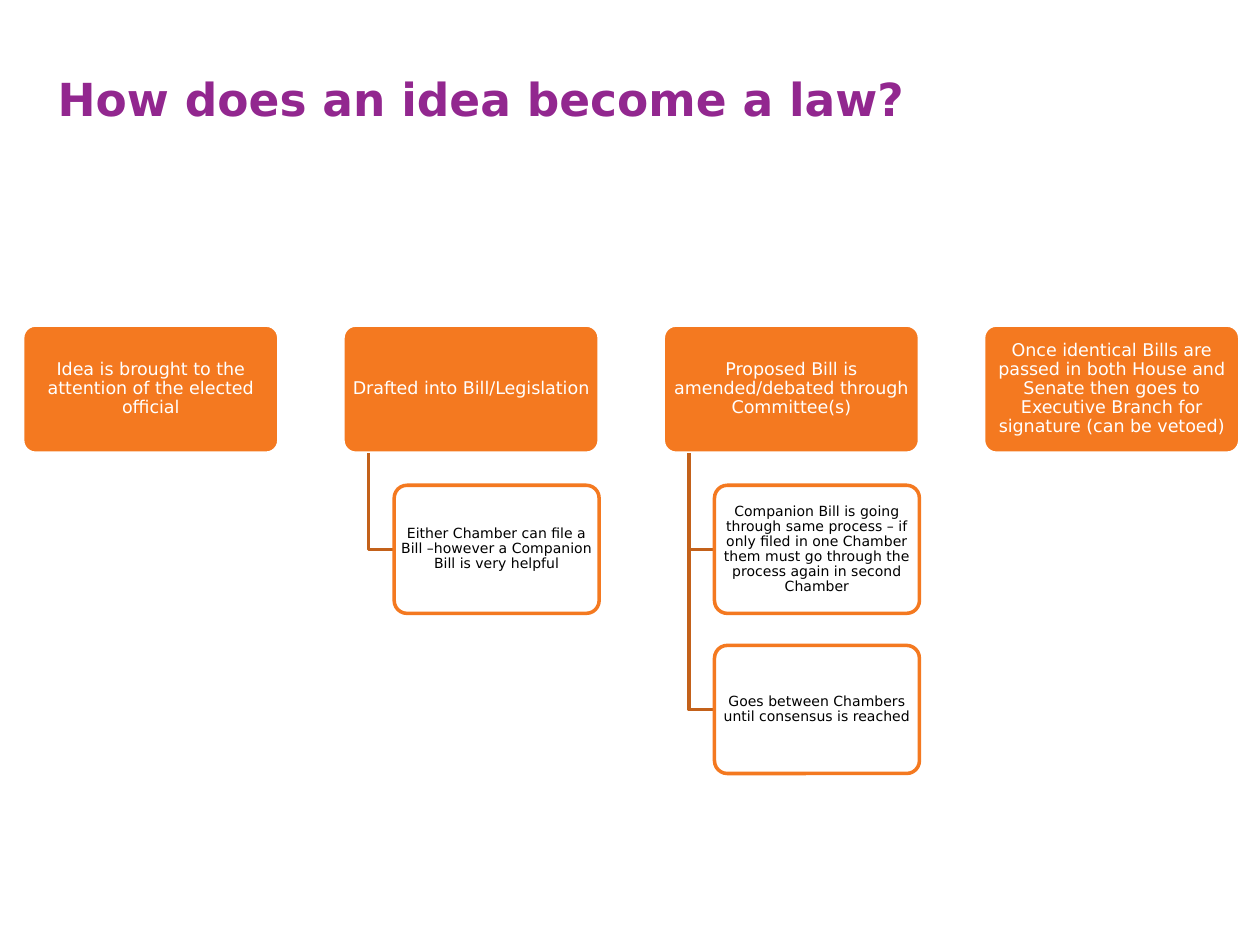
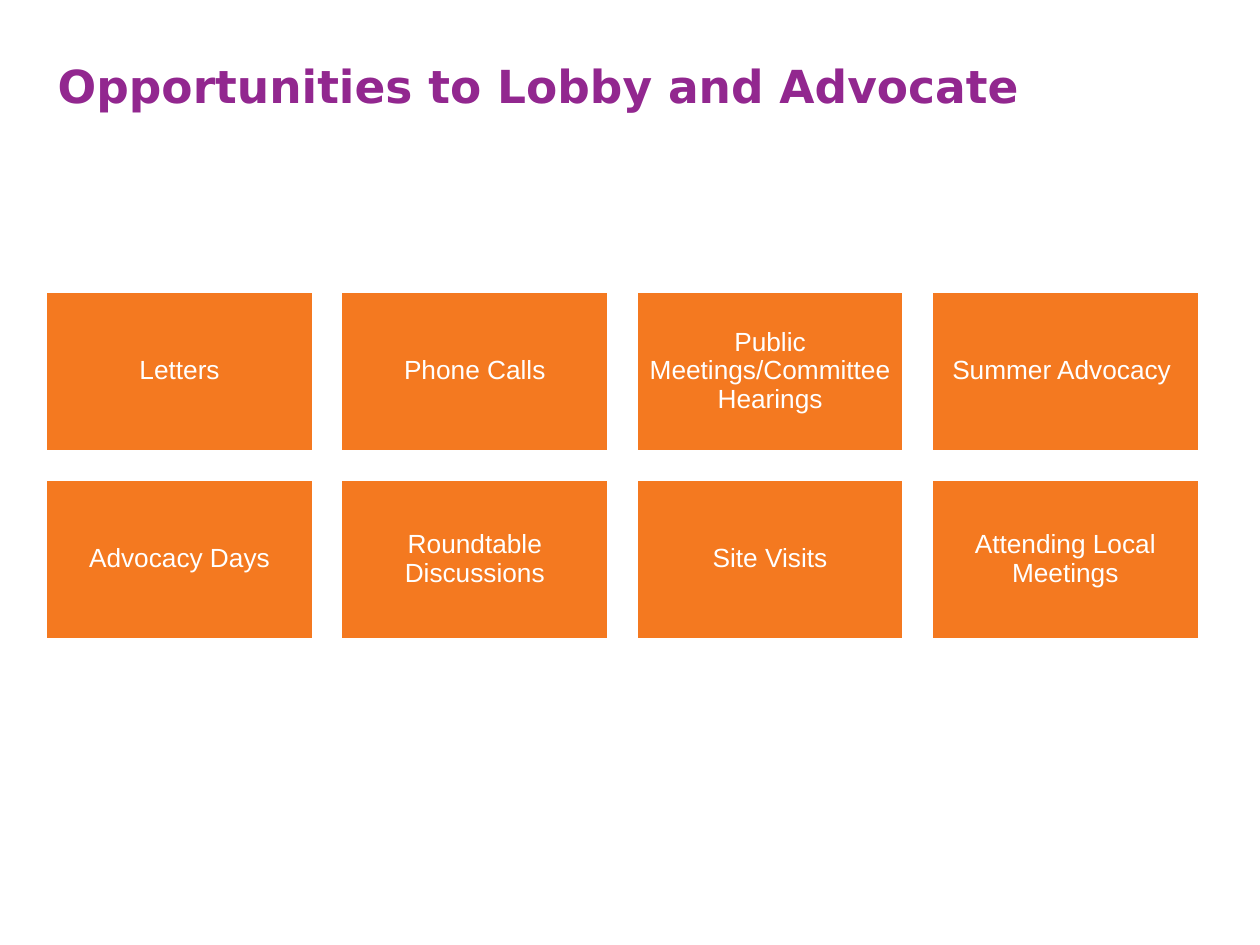
import pptx
import pptx.util
import pptx.dml.color
import pptx.enum.shapes
import pptx.enum.text
import pptx.oxml.ns
import lxml.etree

Inches = pptx.util.Inches
RGBColor = pptx.dml.color.RGBColor
Shapes = pptx.enum.shapes.MSO_SHAPE

PURPLE = RGBColor(0x92, 0x27, 0x8F)
ORANGE = RGBColor(0xF4, 0x79, 0x20)
RUST = RGBColor(0xC3, 0x61, 0x1A)
WHITE = RGBColor(0xFF, 0xFF, 0xFF)
BLACK = RGBColor(0x00, 0x00, 0x00)
TITLE_FONT = "DejaVu Sans"
TILE_FONT = "Arial"
COLUMNS = 4
LEFT = 0.36

STEPS = [
    ("Idea is brought to the attention of the elected official", []),
    ("Drafted into Bill/Legislation",
     ["Either Chamber can file a Bill –however a Companion Bill is very helpful"]),
    ("Proposed Bill is amended/debated through Committee(s)",
     ["Companion Bill is going through same process – if only filed in one Chamber "
      "them must go through the process again in second Chamber",
      "Goes between Chambers until consensus is reached"]),
    ("Once identical Bills are passed in both House and Senate then goes to "
     "Executive Branch for signature (can be vetoed)", []),
]
OPPORTUNITIES = [
    "Letters", "Phone Calls", "Public Meetings/Committee Hearings", "Summer Advocacy ",
    "Advocacy Days", "Roundtable Discussions", "Site Visits", "Attending Local Meetings",
]


def write(shape, text, font, size, color, inset_x, inset_y, bold=False):
    frame = shape.text_frame
    frame.word_wrap = True
    frame.margin_left = frame.margin_right = Inches(inset_x)
    frame.margin_top = frame.margin_bottom = Inches(inset_y)
    frame.text = text
    para = frame.paragraphs[0]
    span = para.runs[0]
    span.font.name = font
    span.font.size = pptx.util.Pt(size)
    span.font.bold = bold
    span.font.color.rgb = color
    return para


def add_title(page, text, top, width, height):
    box = page.shapes.add_textbox(Inches(LEFT), Inches(top), Inches(width), Inches(height))
    write(box, text, TITLE_FONT, 26, PURPLE, 0.1, 0.1, bold=True)


def set_line(shape, color):
    shape.shadow.inherit = False
    shape.line.color.rgb = color
    shape.line.width = pptx.util.Pt(2)


def add_box(page, kind, place, text, fill, line, color, font, size, insets):
    box = page.shapes.add_shape(kind, *map(Inches, place))
    if kind == Shapes.ROUNDED_RECTANGLE:
        box.adjustments[0] = 0.1
    box.fill.solid()
    box.fill.fore_color.rgb = fill
    set_line(box, line)
    para = write(box, text, font, size, color, *insets)
    para.alignment = pptx.enum.text.PP_ALIGN.CENTER
    para.line_spacing = 0.9
    box.text_frame.vertical_anchor = pptx.enum.text.MSO_ANCHOR.MIDDLE
    return box


def add_elbow(page, left, top, right, bottom):
    builder = page.shapes.build_freeform(Inches(left), Inches(top))
    corners = [(left, bottom), (right, bottom)]
    builder.add_line_segments([(Inches(x), Inches(y)) for x, y in corners], close=False)
    elbow = builder.convert_to_shape()
    elbow.fill.background()
    set_line(elbow, RUST)


def add_step(page, left, top, width, text, details):
    height = width / 2
    rounded = Shapes.ROUNDED_RECTANGLE
    insets = (0.02, 0.01)
    add_box(page, rounded, (left, top, width, height), text,
            ORANGE, WHITE, WHITE, TITLE_FONT, 10, insets)
    stem = left + 0.1 * width
    detail_left = left + 0.2 * width
    for row, detail in enumerate(details, 1):
        detail_top = top + row * 1.25 * height
        add_elbow(page, stem, top + height, detail_left, detail_top + height / 2)
        card = add_box(page, rounded, (detail_left, detail_top, 0.8 * width, height), detail,
                       WHITE, ORANGE, BLACK, TITLE_FONT, 8, insets)
        qn = pptx.oxml.ns.qn
        fill_color = card.fill._xPr.find(qn("a:solidFill"))[0]
        lxml.etree.SubElement(fill_color, qn("a:alpha"), val="90000")


def build_law_page(page):
    add_title(page, "How does an idea become a law?", 0.46, 8.73, 1.45)
    left, span_width, gap = 0.18, 9.66, 0.25
    width = span_width / (COLUMNS + (COLUMNS - 1) * gap)
    for column, (text, details) in enumerate(STEPS):
        add_step(page, left + column * width * (1 + gap), 2.58, width, text, details)


def build_opportunities_page(page):
    add_title(page, "Opportunities to Lobby and Advocate", 0.36, 9.3, 1.15)
    top, span_width, gap = 2.31, 9.16, 0.1
    width = span_width / (COLUMNS + (COLUMNS - 1) * gap)
    height = 0.6 * width
    for index, text in enumerate(OPPORTUNITIES):
        row, column = divmod(index, COLUMNS)
        place = (LEFT + column * width * (1 + gap),
                 top + row * (height + gap * width), width, height)
        add_box(page, Shapes.RECTANGLE, place, text,
                ORANGE, WHITE, WHITE, TILE_FONT, 15, (0.06, 0.06))


def main():
    deck = pptx.Presentation()
    deck.slide_width, deck.slide_height = Inches(10), Inches(7.5)
    for build in (build_law_page, build_opportunities_page):
        build(deck.slides.add_slide(deck.slide_layouts[6]))
    deck.save("out.pptx")


if __name__ == "__main__":
    main()
